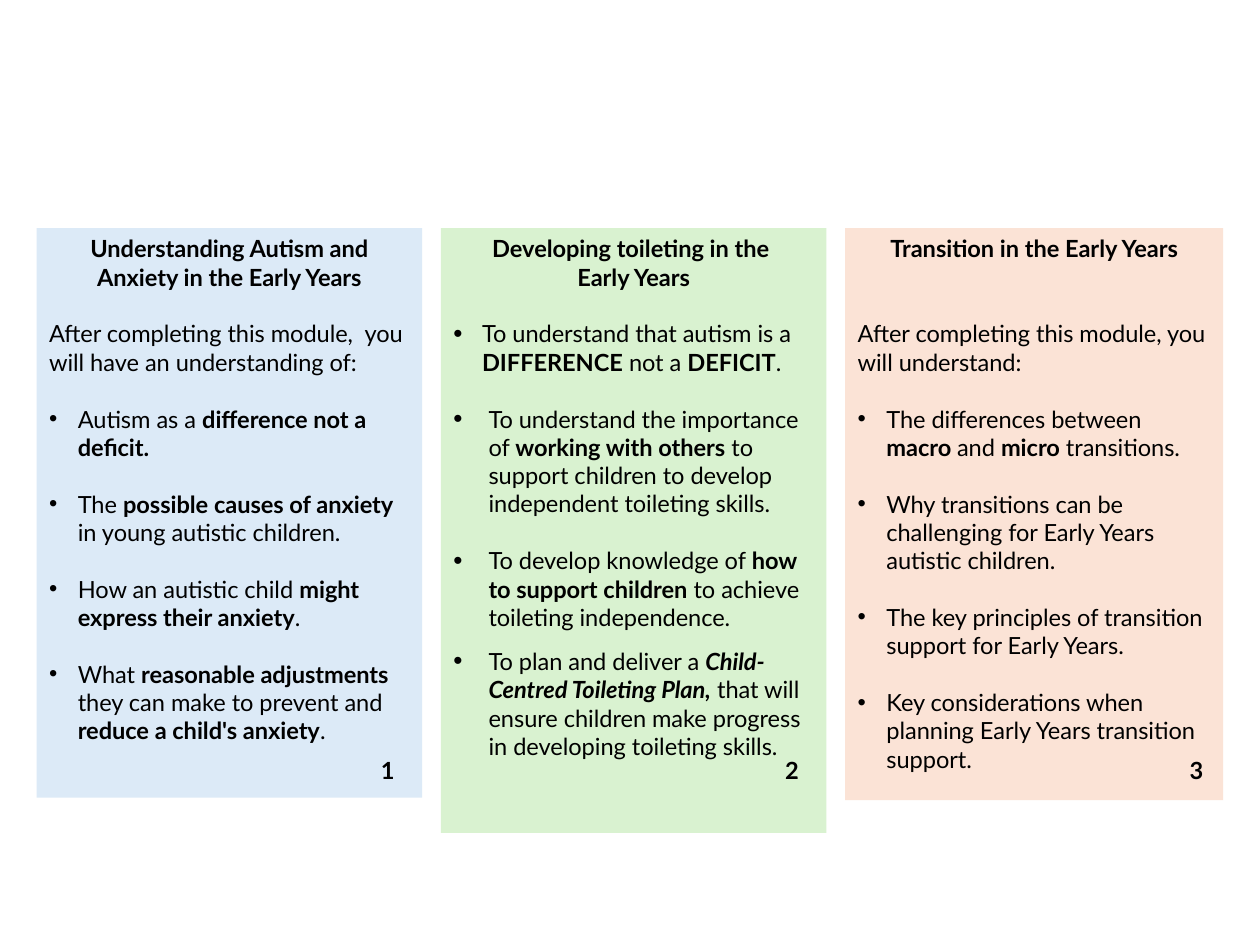
from dataclasses import dataclass

from lxml import etree
from pptx import Presentation
from pptx import util as u
from pptx.dml import color
from pptx.enum import shapes, text
from pptx.oxml import ns

COLORS = {"ink": "000000", "blue": "DCEAF7", "green": "D9F2D0", "peach": "FBE3D6"}
FONT, SIZE, LINE = "Lato", 13.5, 16.2
LEFT, TOP, GAP = 0.74, 4.6, 0.38
NUMBER_X, NUMBER_Y = 6.69, 15.11


@dataclass
class Para:
    """One paragraph, in which |bars| enclose bold words."""
    words: str
    before: float = LINE
    indent: float = 0
    bullet_size: int = 100
    centred: bool = False
    italic: bool = False


CARDS = [
    ("blue", 7.77, 11.48, [
        Para("|Understanding Autism and Anxiety in the Early Years|", centred=True),
        Para("After completing this module,  you will have an understanding of:"),
        Para("Autism as a |difference not a deficit. |", indent=0.58),
        Para("The |possible causes of anxiety| in young autistic children.", indent=0.58),
        Para("How an autistic child |might express their anxiety|.", indent=0.58),
        Para("What |reasonable adjustments| they can make to prevent and "
             "|reduce a child's anxiety|. ", indent=0.58),
    ]),
    ("green", 7.77, 12.19, [
        Para("|Developing toileting in the |", centred=True),
        Para("|Early Years|", before=0, centred=True),
        Para("To understand that autism is a |DIFFERENCE| not a |DEFICIT|.",
             indent=0.58, bullet_size=110),
        Para("To understand the importance of |working with others| to support "
             "children to develop independent toileting skills.",
             indent=0.71, bullet_size=110),
        Para("To develop knowledge of |how to support children| to achieve "
             "toileting independence.", indent=0.71, bullet_size=110),
        Para("To plan and deliver a |Child-Centred Toileting Plan,| that will ensure "
             "children make progress in developing toileting skills.",
             before=9, indent=0.71, bullet_size=110, italic=True),
    ]),
    ("peach", 7.62, 11.53, [
        Para("|Transition in the Early Years|", centred=True),
        Para("After completing this module, you will understand:", before=2 * LINE),
        Para("The differences between |macro |and |micro| transitions.", indent=0.58),
        Para("Why transitions can be challenging for Early Years autistic children.",
             indent=0.58),
        Para("The key principles of transition support for Early Years.", indent=0.58),
        Para("Key considerations when planning Early Years transition support.",
             indent=0.58),
    ]),
]


def add_bullet(p, indent, size):
    """Give a paragraph a hanging round bullet."""
    pPr = p._p.get_or_add_pPr()
    pPr.set("marL", str(u.Cm(indent)))
    pPr.set("indent", str(-u.Cm(indent)))
    clr = etree.SubElement(pPr, ns.qn("a:buClr"))
    etree.SubElement(clr, ns.qn("a:srgbClr"), val=COLORS["ink"])
    etree.SubElement(pPr, ns.qn("a:buSzPct"), val=str(size * 1000))
    etree.SubElement(pPr, ns.qn("a:buFont"), typeface="Arial")
    etree.SubElement(pPr, ns.qn("a:buChar"), char="•")


def write_para(p, para, first):
    """Fill a paragraph with plain and bold runs."""
    p.alignment = text.PP_ALIGN.CENTER if para.centred else text.PP_ALIGN.LEFT
    p.space_before = u.Pt(0 if first else para.before)
    if para.indent:
        add_bullet(p, para.indent, para.bullet_size)
    for i, part in enumerate(para.words.split("|")):
        if part:
            r = p.add_run()
            r.text = part
            r.font.name, r.font.size = FONT, u.Pt(SIZE)
            r.font.bold = i % 2 == 1
            r.font.italic = r.font.bold and para.italic
            r.font.color.rgb = color.RGBColor.from_string(COLORS["ink"])


def add_box(s, at, paras, fill=None):
    """Add a filled rectangle, or a plain text box when no fill is given."""
    at = [u.Cm(v) for v in at]
    if fill:
        sp = s.shapes.add_shape(shapes.MSO_SHAPE.RECTANGLE, *at)
        sp.shadow.inherit = False
        sp.fill.solid()
        sp.fill.fore_color.rgb = color.RGBColor.from_string(COLORS[fill])
        sp.line.fill.background()
    else:
        sp = s.shapes.add_textbox(*at)
    tf = sp.text_frame
    tf.word_wrap = True
    tf.vertical_anchor = text.MSO_ANCHOR.TOP
    for i, para in enumerate(paras):
        p = tf.add_paragraph() if i else tf.paragraphs[0]
        write_para(p, para, first=i == 0)


def main():
    """Build the slide of three numbered module cards."""
    prs = Presentation()
    prs.slide_width, prs.slide_height = u.Cm(25.4), u.Cm(19.05)
    s = prs.slides.add_slide(prs.slide_layouts[6])
    left = LEFT
    for number, (fill, width, height, paras) in enumerate(CARDS, 1):
        add_box(s, (left, TOP, width, height), paras, fill)
        add_box(s, (left + NUMBER_X, NUMBER_Y, 0.64, 0.84), [Para(f"|{number}|")],
                fill if number == 1 else None)
        left += width + GAP
    prs.save("out.pptx")


if __name__ == "__main__":
    main()
